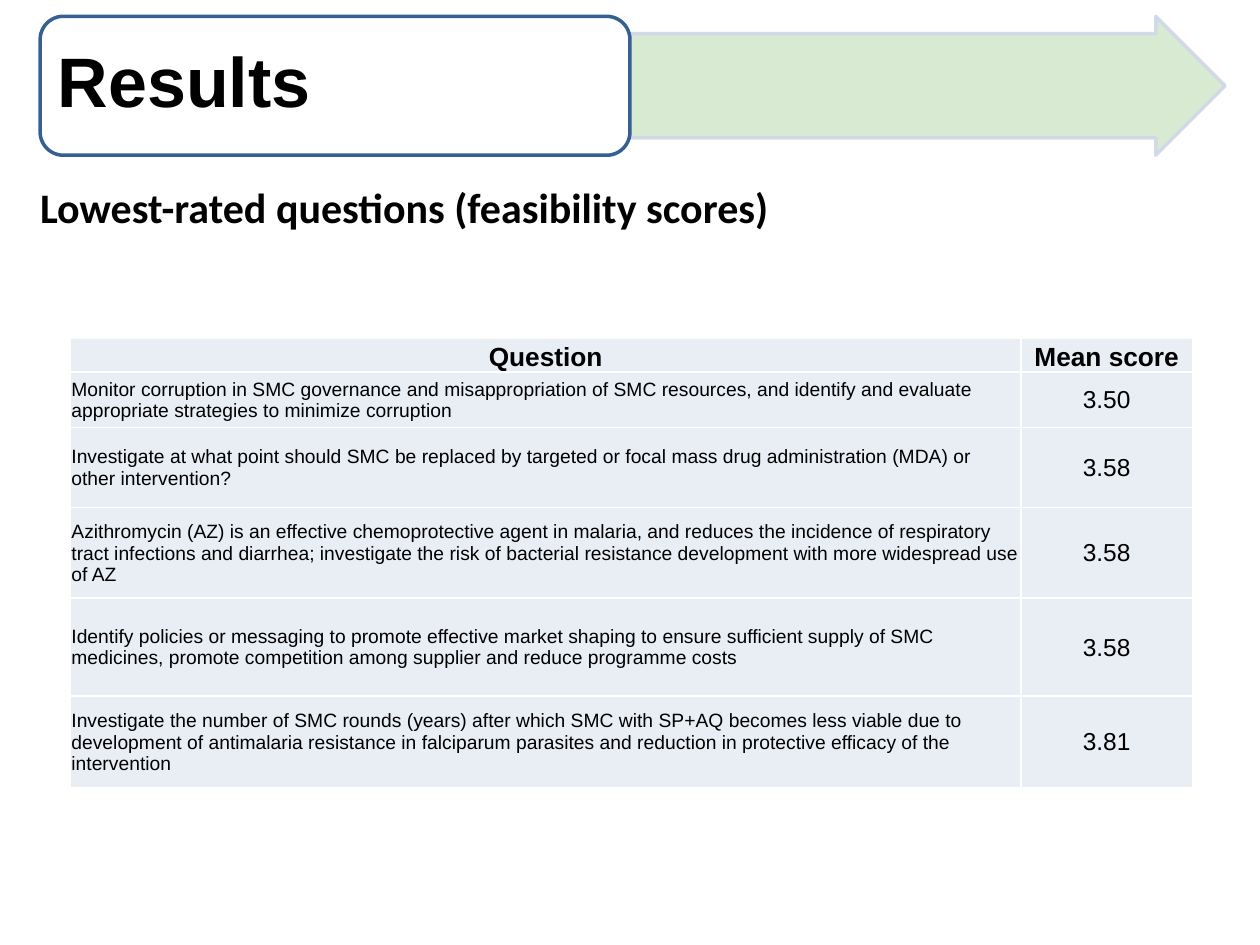
from dataclasses import dataclass

from lxml.etree import SubElement
from pptx import Presentation
from pptx.dml.color import RGBColor
from pptx.enum.shapes import MSO_SHAPE as Shape
from pptx.enum.text import MSO_ANCHOR as Anchor, PP_ALIGN as Align
from pptx.oxml.ns import qn
from pptx.util import Cm, Pt

BLACK, WHITE, CELL_FILL = "000000", "FFFFFF", "E9EDF4"
BORDER_TAGS = ("a:lnL", "a:lnR", "a:lnT", "a:lnB")
COLUMN_WIDTHS = (19.16, 3.46)
HEADER_HEIGHT = 0.69


@dataclass(frozen=True)
class Box:
    left: float
    top: float
    width: float
    height: float

    def lengths(self) -> tuple:
        return Cm(self.left), Cm(self.top), Cm(self.width), Cm(self.height)


@dataclass(frozen=True)
class Banner:
    kind: Shape
    box: Box
    adjustments: tuple
    fill: str
    line: str
    opacity: int = 100


@dataclass(frozen=True)
class Question:
    text: str
    score: str
    height: float


BANNERS = (
    Banner(Shape.RIGHT_ARROW, Box(12.7, 0.33, 12, 2.8), (0.75, 0.5), "D9EAD3", "CFD7E7", 89),
    Banner(Shape.ROUNDED_RECTANGLE, Box(0.81, 0.33, 11.89, 2.8), (0.167,), WHITE, "366092"),
)

QUESTIONS = (
    Question("Monitor corruption in SMC governance and misappropriation of SMC resources, "
             "and identify and evaluate appropriate strategies to minimize corruption", "3.50", 1.12),
    Question("Investigate at what point should SMC be replaced by targeted or focal mass "
             "drug administration (MDA) or other intervention?", "3.58", 1.61),
    Question("Azithromycin (AZ) is an effective chemoprotective agent in malaria, and reduces "
             "the incidence of respiratory tract infections and diarrhea; investigate the risk "
             "of bacterial resistance development with more widespread use of AZ", "3.58", 1.83),
    Question("Identify policies or messaging to promote effective market shaping to ensure "
             "sufficient supply of SMC medicines, promote competition among supplier and "
             "reduce programme costs", "3.58", 1.97),
    Question("Investigate the number of SMC rounds (years) after which SMC with SP+AQ becomes "
             "less viable due to development of antimalaria resistance in falciparum parasites "
             "and reduction in protective efficacy of the intervention", "3.81", 1.85),
)


def color(value: str) -> RGBColor:
    return RGBColor.from_string(value)


def write(frame, text: str, *, size: float, font: str = "Arial", bold: bool = False,
          align: Align = Align.LEFT, before: float = 0, spacing: float = 1.0) -> None:
    paragraph = frame.paragraphs[0]
    paragraph.alignment = align
    paragraph.space_before = Pt(before)
    paragraph.line_spacing = spacing
    run = paragraph.add_run()
    run.text = text
    run.font.name, run.font.size, run.font.bold = font, Pt(size), bold
    run.font.color.rgb = color(BLACK)


def set_margins(target, left: float, top: float, right: float, bottom: float) -> None:
    target.margin_left, target.margin_top = Cm(left), Cm(top)
    target.margin_right, target.margin_bottom = Cm(right), Cm(bottom)


def draw_banner(slide, banner: Banner) -> None:
    shape = slide.shapes.add_shape(banner.kind, *banner.box.lengths())
    shape.shadow.inherit = False
    for index, value in enumerate(banner.adjustments):
        shape.adjustments[index] = value
    shape.fill.solid()
    shape.fill.fore_color.rgb = color(banner.fill)
    shape.line.color.rgb = color(banner.line)
    shape.line.width = Pt(2)
    if banner.opacity < 100:
        line_color = shape.line._ln.find(".//" + qn("a:srgbClr"))
        SubElement(line_color, qn("a:alpha"), val=str(banner.opacity * 1000))


def add_text(slide, box: Box, text: str, *, anchor: Anchor = Anchor.TOP,
             inset: tuple = (0.25, 0.13), **text_format) -> None:
    frame = slide.shapes.add_textbox(*box.lengths()).text_frame
    frame.word_wrap = True
    frame.vertical_anchor = anchor
    set_margins(frame, *inset, *inset)
    write(frame, text, **text_format)


def fill_cell(cell, text: str, *, anchor: Anchor = Anchor.MIDDLE, **text_format) -> None:
    set_margins(cell, 0.02, 0.02, 0.02, 0)
    cell.vertical_anchor = anchor
    properties = cell._tc.get_or_add_tcPr()
    for tag in BORDER_TAGS:
        border = SubElement(properties, qn(tag), w=str(Pt(1)))
        SubElement(SubElement(border, qn("a:solidFill")), qn("a:srgbClr"), val=WHITE)
    cell.fill.solid()
    cell.fill.fore_color.rgb = color(CELL_FILL)
    write(cell.text_frame, text, **text_format)


def draw_table(slide, left: float, top: float) -> None:
    heights = (HEADER_HEIGHT, *(question.height for question in QUESTIONS))
    box = Box(left, top, sum(COLUMN_WIDTHS), sum(heights))
    table = slide.shapes.add_table(len(heights), len(COLUMN_WIDTHS), *box.lengths()).table
    table.first_row = table.horz_banding = False
    for column, width in zip(table.columns, COLUMN_WIDTHS):
        column.width = Cm(width)
    for row, height in zip(table.rows, heights):
        row.height = Cm(height)
    for index, heading in enumerate(("Question", "Mean score")):
        fill_cell(table.cell(0, index), heading, anchor=Anchor.BOTTOM,
                  size=15, bold=True, align=Align.CENTER)
    for index, question in enumerate(QUESTIONS, start=1):
        fill_cell(table.cell(index, 0), question.text, size=11)
        fill_cell(table.cell(index, 1), question.score, size=14, align=Align.CENTER)


def main() -> None:
    """Build the slide of the lowest-rated questions and save it."""
    presentation = Presentation()
    presentation.slide_width, presentation.slide_height = Cm(25.4), Cm(19.05)
    slide = presentation.slides.add_slide(presentation.slide_layouts[6])
    for banner in BANNERS:
        draw_banner(slide, banner)
    add_text(slide, Box(0.97, 0.46, 11.61, 2.51), "Results", anchor=Anchor.MIDDLE,
             inset=(0.2, 0.1), size=40, bold=True, spacing=0.9)
    add_text(slide, Box(0.56, 3.53, 24.36, 2), "Lowest-rated questions (feasibility scores)",
             size=24, font="Calibri", bold=True, before=3.6)
    draw_table(slide, 1.42, 6.81)
    presentation.save("out.pptx")


if __name__ == "__main__":
    main()
